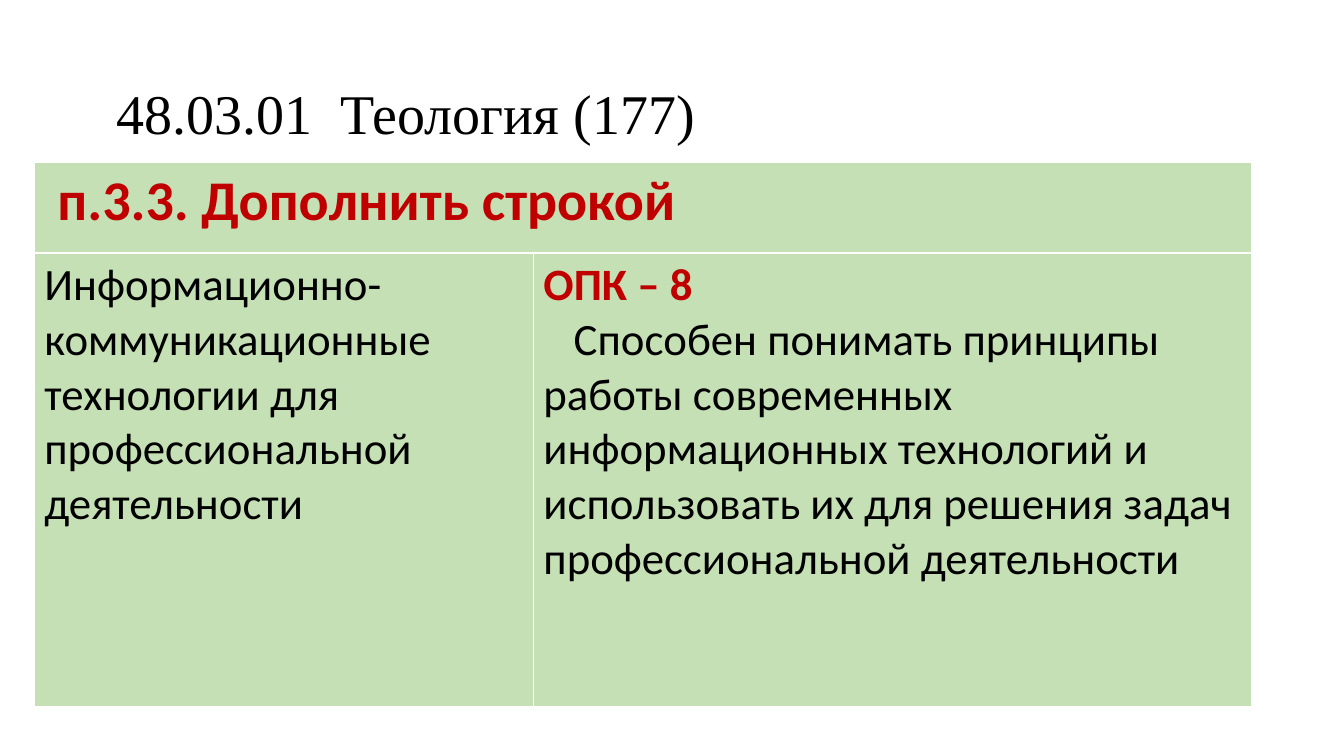
from pptx import Presentation
from pptx.dml.color import RGBColor
from pptx.enum.text import MSO_ANCHOR, PP_ALIGN
from pptx.util import Inches, Pt

BLACK = RGBColor(0x00, 0x00, 0x00)
RED = RGBColor(0xC0, 0x00, 0x00)
PALE_GREEN = RGBColor(0xC5, 0xE0, 0xB4)

COLUMN_WIDTHS = [4.95, 7.12]
ROW_HEIGHTS = [0.9, 4.5]


def write(paragraph, text, size=32, font="Calibri", color=BLACK, bold=False,
          indent=0, line_spacing=1.0):
    paragraph.alignment = PP_ALIGN.LEFT
    paragraph.line_spacing = line_spacing
    paragraph._p.get_or_add_pPr().set("indent", str(Inches(indent)))
    run = paragraph.add_run()
    run.text = text
    run.font.size = Pt(size)
    run.font.name = font
    run.font.bold = bold
    run.font.color.rgb = color


prs = Presentation()
prs.slide_width, prs.slide_height = Inches(13.33), Inches(7.5)
slide = prs.slides.add_slide(prs.slide_layouts[5])

title = slide.shapes.title
title.left, title.top = Inches(0.92), Inches(0.22)
title.width, title.height = Inches(11.5), Inches(1.86)
title.text_frame.vertical_anchor = MSO_ANCHOR.MIDDLE
write(title.text_frame.paragraphs[0], "48.03.01  Теология (177)", size=40,
      font="Times New Roman", indent=0.14, line_spacing=0.9)

# The default table style supplies the white rules between cells.
competencies = slide.shapes.add_table(
    len(ROW_HEIGHTS), len(COLUMN_WIDTHS), Inches(0.34), Inches(1.61),
    Inches(sum(COLUMN_WIDTHS)), Inches(sum(ROW_HEIGHTS))).table
for column, width in zip(competencies.columns, COLUMN_WIDTHS):
    column.width = Inches(width)
for row, height in zip(competencies.rows, ROW_HEIGHTS):
    row.height = Inches(height)
for cell in competencies.iter_cells():
    cell.fill.solid()
    cell.fill.fore_color.rgb = PALE_GREEN

heading = competencies.cell(0, 0)
heading.merge(competencies.cell(0, 1))
write(heading.text_frame.paragraphs[0], "п.3.3. Дополнить строкой",
      size=40, color=RED, bold=True, indent=0.13)

category = competencies.cell(1, 0).text_frame
write(category.paragraphs[0],
      "Информационно-коммуникационные технологии для "
      "профессиональной деятельности")

competency = competencies.cell(1, 1).text_frame
write(competency.paragraphs[0], "ОПК – 8", color=RED, bold=True)
write(competency.add_paragraph(),
      "Способен понимать принципы работы современных информационных "
      "технологий и использовать их для решения задач "
      "профессиональной деятельности", indent=0.3)

prs.save("out.pptx")
